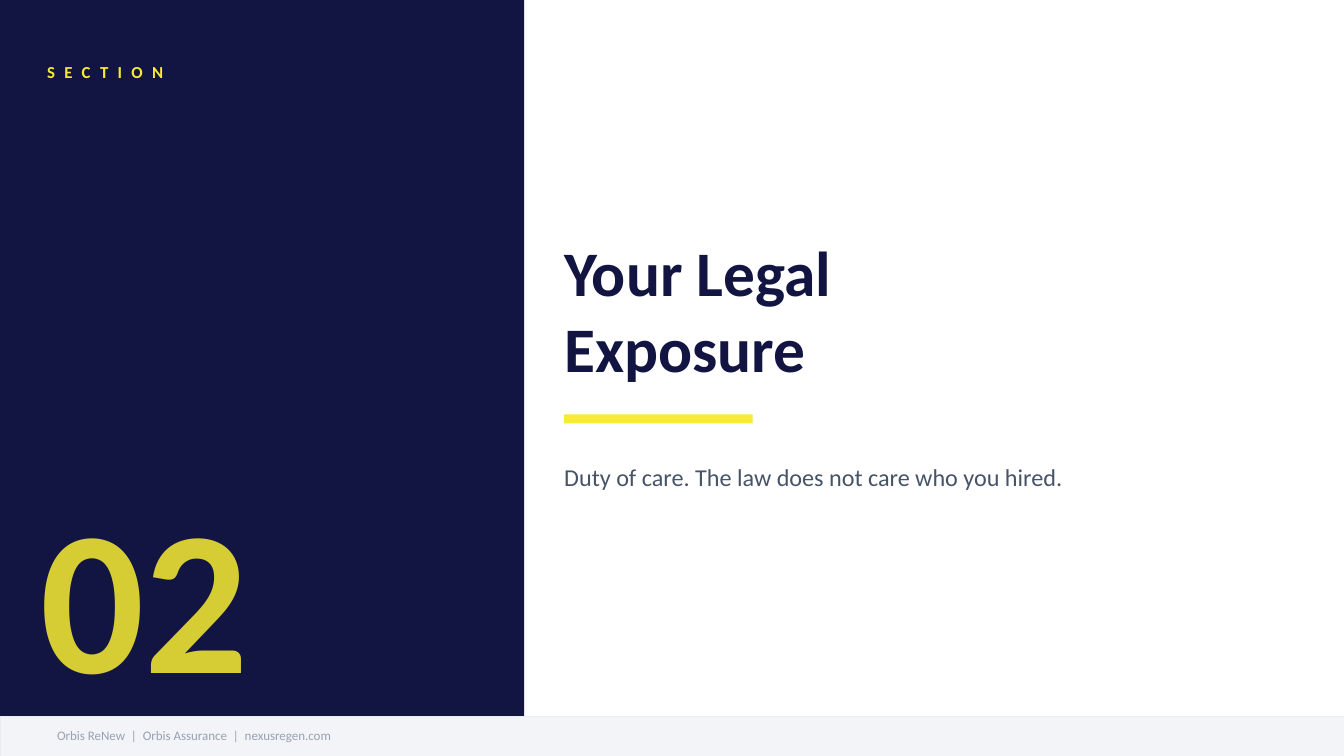
import pptx
import pptx.dml.color
import pptx.enum.shapes
import pptx.enum.text
import pptx.util
from lxml import etree
from pptx.oxml.ns import qn

Cm = pptx.util.Cm
Pt = pptx.util.Pt
RGBColor = pptx.dml.color.RGBColor

NAVY = RGBColor(0x12, 0x15, 0x41)
YELLOW = RGBColor(0xF7, 0xEC, 0x33)
SLATE = RGBColor(0x47, 0x54, 0x67)
GREY = RGBColor(0x98, 0xA2, 0xB3)
PALE = RGBColor(0xF2, 0xF4, 0xF7)
BORDER = RGBColor(0xEA, 0xEC, 0xF0)
WHITE = RGBColor(0xFF, 0xFF, 0xFF)

WIDTH, HEIGHT = 33.87, 19.05
PANEL_WIDTH = 13.21
MARGIN = 1.19
TITLE_LEFT = 14.22
TITLE_WIDTH = 18.62
FOOTER_TOP = 18.06


class SectionSlide:
    font = "Calibri"

    def __init__(self, prs):
        self.s = prs.slides.add_slide(prs.slide_layouts[6])
        fill = self.s.background.fill
        fill.solid()
        fill.fore_color.rgb = WHITE

    def rect(self, x, y, w, h, color, border=None):
        sp = self.s.shapes.add_shape(
            pptx.enum.shapes.MSO_SHAPE.RECTANGLE, Cm(x), Cm(y), Cm(w), Cm(h))
        sp.shadow.inherit = False
        sp.fill.solid()
        sp.fill.fore_color.rgb = color
        if border is None:
            sp.line.fill.background()
        else:
            sp.line.color.rgb = border
            sp.line.width = Pt(0.5)

    def text(self, x, y, w, h, text, size, color, bold=False,
             spacing=None, opacity=None, inset=False):
        sp = self.s.shapes.add_textbox(Cm(x), Cm(y), Cm(w), Cm(h))
        tf = sp.text_frame
        tf.word_wrap = True
        tf.vertical_anchor = pptx.enum.text.MSO_ANCHOR.MIDDLE
        if not inset:
            tf.margin_left = tf.margin_right = 0
            tf.margin_top = tf.margin_bottom = 0
        tf.text = text
        for p in tf.paragraphs:
            for r in p.runs:
                r.font.name = self.font
                r.font.size = Pt(size)
                r.font.bold = bold
                r.font.color.rgb = color
                rPr = r.font._element
                if spacing is not None:
                    rPr.set("spc", str(round(spacing * 100)))
                if opacity is not None:
                    clr = rPr.find(".//" + qn("a:srgbClr"))
                    alpha = etree.SubElement(clr, qn("a:alpha"))
                    alpha.set("val", str(opacity * 1000))


def main():
    prs = pptx.Presentation()
    prs.slide_width = Cm(WIDTH)
    prs.slide_height = Cm(HEIGHT)
    slide = SectionSlide(prs)

    slide.rect(0, 0, PANEL_WIDTH, HEIGHT, NAVY)
    slide.text(1.02, 12.19, 11.18, 5.41, "02", 146.7, YELLOW,
               bold=True, opacity=85)
    slide.text(MARGIN, 1.3, 10.85, 1.02, "SECTION", 12, YELLOW,
               bold=True, spacing=6.7)

    slide.text(TITLE_LEFT, 5.41, TITLE_WIDTH, 4.75, "Your Legal\nExposure",
               45.3, NAVY, bold=True)
    slide.rect(TITLE_LEFT, 10.44, 4.75, 0.23, YELLOW)
    slide.text(TITLE_LEFT, 11.1, TITLE_WIDTH, 1.85,
               "Duty of care. The law does not care who you hired.", 17.3, SLATE)

    slide.rect(0, FOOTER_TOP, WIDTH, HEIGHT - FOOTER_TOP, PALE, BORDER)
    slide.text(MARGIN, 18.08, TITLE_WIDTH, 0.89,
               "Orbis ReNew  |  Orbis Assurance  |  nexusregen.com",
               9.3, GREY, inset=True)

    prs.save("out.pptx")


if __name__ == "__main__":
    main()
